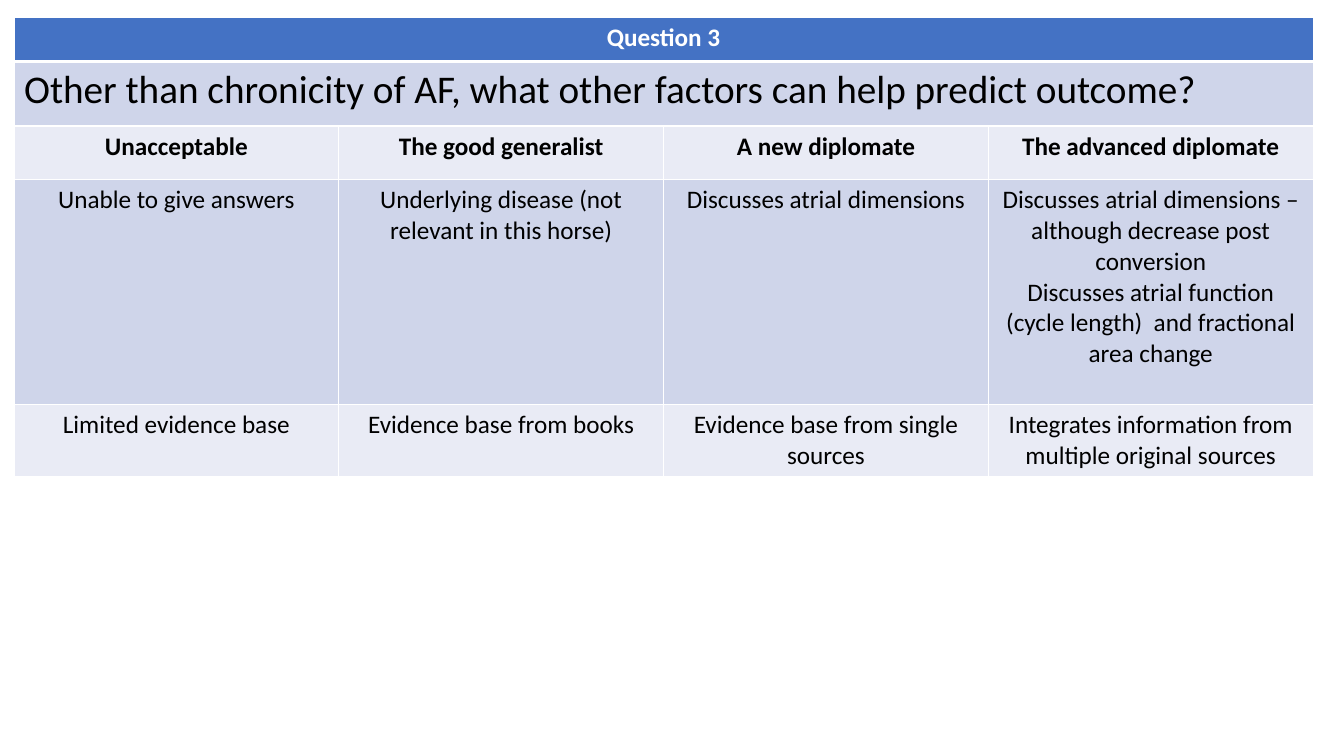
from lxml.etree import SubElement
from pptx import Presentation
from pptx.dml.color import RGBColor
from pptx.enum.text import PP_ALIGN
from pptx.oxml.ns import qn
from pptx.util import Pt

HEADER_BLUE, BAND_DARK, BAND_LIGHT = "4472C4", "CFD5EA", "E9EBF5"
WHITE, BLACK = "FFFFFF", "000000"
COLUMN_COUNT = 4
ROW_HEIGHTS = [31.5, 46, 38.5, 160.5, 51]

LEVELS = ["Unacceptable", "The good generalist", "A new diplomate", "The advanced diplomate"]
ANSWERS = [
    "Unable to give answers",
    "Underlying disease (not relevant in this horse)",
    "Discusses atrial dimensions",
    "Discusses atrial dimensions – although decrease post conversion\n"
    "Discusses atrial function (cycle length)  and fractional area change",
]
EVIDENCE = [
    "Limited evidence base",
    "Evidence base from books",
    "Evidence base from single sources",
    "Integrates information from multiple original sources",
]
RUBRIC = [
    (["Question 3"], HEADER_BLUE, WHITE, 18, True, PP_ALIGN.CENTER),
    (["Other than chronicity of AF, what other factors can help predict outcome?"],
     BAND_DARK, BLACK, 28, False, PP_ALIGN.LEFT),
    (LEVELS, BAND_LIGHT, BLACK, 18, True, PP_ALIGN.CENTER),
    (ANSWERS, BAND_DARK, BLACK, 18, False, PP_ALIGN.CENTER),
    (EVIDENCE, BAND_LIGHT, BLACK, 18, False, PP_ALIGN.CENTER),
]


def color(value):
    """Turn a hex string into a colour."""
    return RGBColor.from_string(value)


def add_borders(cell, top, bottom):
    """Draw white borders with the given top and bottom widths."""
    properties = cell._tc.get_or_add_tcPr()
    sides = [("a:lnL", 1), ("a:lnR", 1), ("a:lnT", top), ("a:lnB", bottom)]
    for tag, width in sides:
        border = SubElement(properties, qn(tag), w=str(Pt(width)))
        SubElement(SubElement(border, qn("a:solidFill")), qn("a:srgbClr"), val=WHITE)


def write_cell(cell, text, ink, size, bold, alignment):
    """Write one paragraph for each line of the text."""
    frame = cell.text_frame
    for number, line in enumerate(text.split("\n")):
        paragraph = frame.add_paragraph() if number else frame.paragraphs[0]
        paragraph.alignment = alignment
        run = paragraph.add_run()
        run.text = line
        run.font.name = "Calibri"
        run.font.size = Pt(size)
        run.font.bold = bold
        run.font.color.rgb = color(ink)


def add_rubric(slide, left, top, width):
    """Place the marking rubric with equal columns across the given width."""
    rubric = slide.shapes.add_table(
        len(RUBRIC), COLUMN_COUNT, Pt(left), Pt(top), Pt(width), Pt(sum(ROW_HEIGHTS))
    ).table
    for column in rubric.columns:
        column.width = Pt(width / COLUMN_COUNT)
    for index, (texts, fill, *style) in enumerate(RUBRIC):
        row = rubric.rows[index]
        row.height = Pt(ROW_HEIGHTS[index])
        for cell in row.cells:
            add_borders(cell, 3 if index == 1 else 1, 3 if index == 0 else 1)
            cell.fill.solid()
            cell.fill.fore_color.rgb = color(fill)
        if len(texts) == 1:
            row.cells[0].merge(row.cells[COLUMN_COUNT - 1])
        for cell, text in zip(row.cells, texts):
            write_cell(cell, text, *style)


def main():
    """Build and save the question slide."""
    deck = Presentation()
    deck.slide_width, deck.slide_height = Pt(960), Pt(540)
    slide = deck.slides.add_slide(deck.slide_layouts[6])
    add_rubric(slide, 10, 12.5, 928)
    deck.save("out.pptx")


if __name__ == "__main__":
    main()
